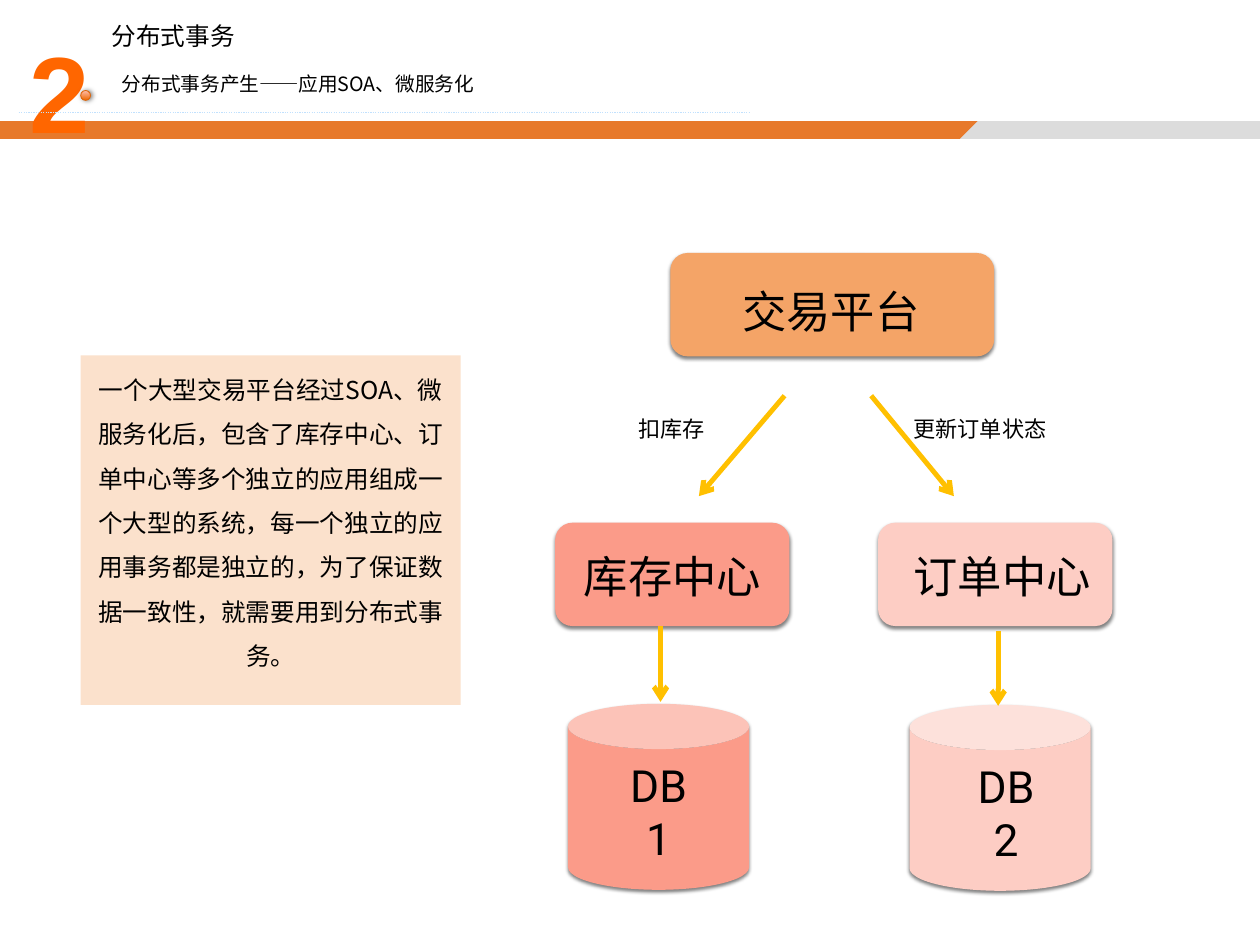
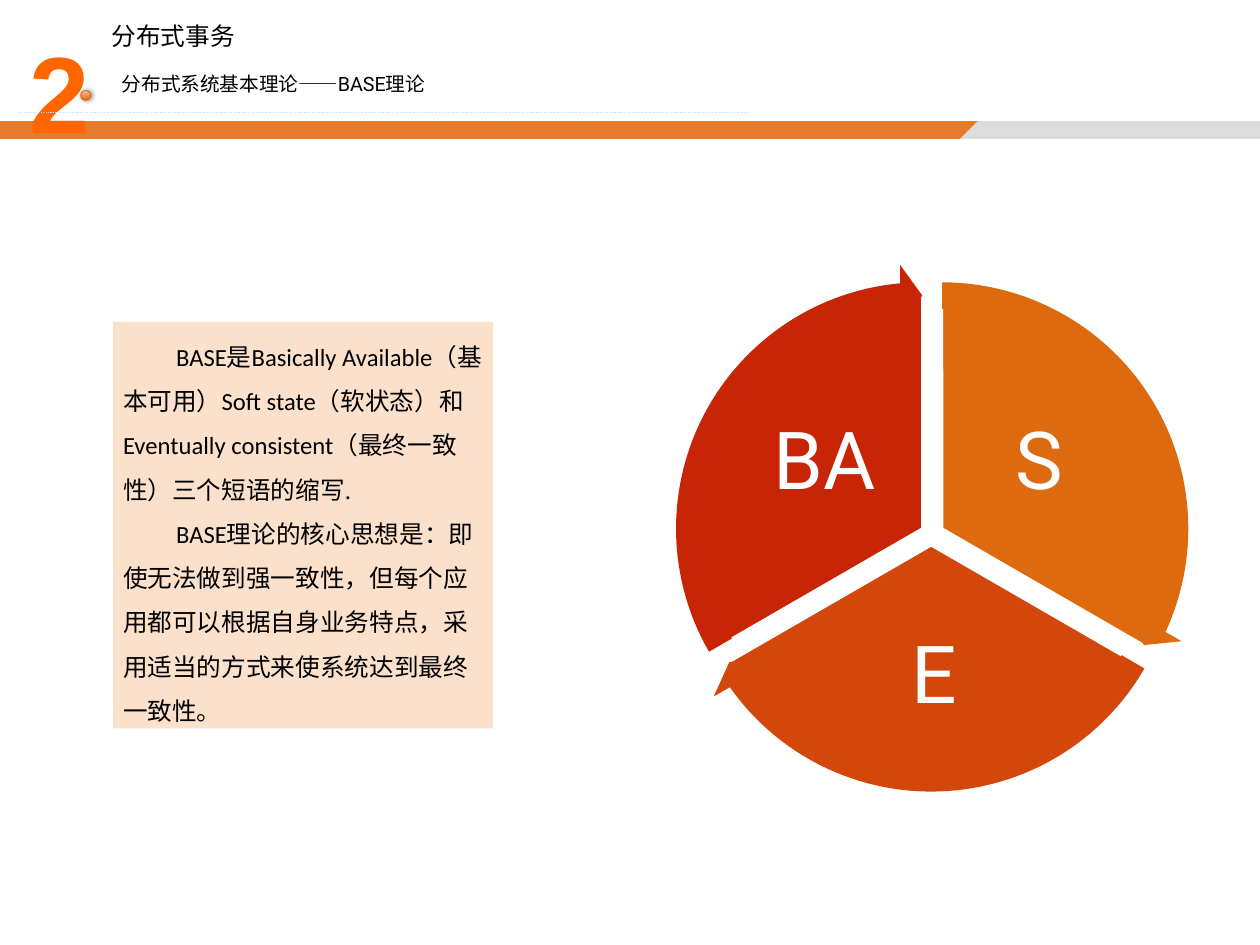
from lxml.etree import SubElement
from pptx import Presentation
from pptx.dml.color import RGBColor
from pptx.enum.dml import MSO_LINE
from pptx.enum.shapes import MSO_CONNECTOR, MSO_SHAPE
from pptx.enum.text import MSO_ANCHOR, PP_ALIGN
from pptx.oxml.ns import qn
from pptx.util import Pt

PX = 10160  # EMU per px, 90 px to the inch
BLACK, WHITE = "000000", "FFFFFF"
ORANGE, GREY, SAND, GOLD = "E7792B", "DCDCDC", "FBE1CC", "FFC000"
CORAL, BLUSH = "FB9B89", "FDCDC4"
CJK, CJK_SUBTITLE = "Noto Sans CJK SC", "Noto Sans CJK JP"
LEFT, CENTER = PP_ALIGN.LEFT, PP_ALIGN.CENTER
TOP, MIDDLE = MSO_ANCHOR.TOP, MSO_ANCHOR.MIDDLE
color_of = RGBColor.from_string


def set_shadow(item, blur=0, distance=0, angle=0):
    """Replace the theme shadow by a soft black one, or by none."""
    effects = SubElement(item._element.spPr, qn("a:effectLst"))
    if blur:
        outer = SubElement(effects, qn("a:outerShdw"), blurRad=str(Pt(blur)),
                           dist=str(Pt(distance)), dir=str(angle * 60000),
                           rotWithShape="0")
        black = SubElement(outer, qn("a:srgbClr"), val=BLACK)
        SubElement(black, qn("a:alpha"), val="50000")


def write(box, text, size, latin, align=CENTER, anchor=TOP, color=BLACK,
          east=CJK, wrap=True, inset=(9, 5), spacing=1.0, indent=0):
    frame = box.text_frame
    frame.text = text
    frame.word_wrap = wrap
    frame.vertical_anchor = anchor
    frame.margin_left = frame.margin_right = inset[0] * PX
    frame.margin_top = frame.margin_bottom = inset[1] * PX
    for para in frame.paragraphs:
        para.alignment = align
        para.line_spacing = spacing
        if indent:
            para._p.get_or_add_pPr().set("indent", str(indent * PX))
        for span in para.runs:
            span.font.size = Pt(size)
            span.font.color.rgb = color_of(color)
            span.font.name = latin
            SubElement(span.font._element, qn("a:ea"), typeface=east)


deck = Presentation()
deck.slide_width, deck.slide_height = 1280 * PX, 960 * PX

# Shared header: bands, chapter number, title, subtitle
bands = [
    (GREY, [(992, 123), (974, 141), (1280, 141), (1280, 123)]),
    (ORANGE, [(0, 123), (0, 141), (975, 141), (993, 123)]),
]
subtitles = [
    ("分布式事务产生——应用SOA、微服务化", CJK_SUBTITLE, 392),
    ("分布式系统基本理论——BASE理论", "Roboto", 512),
]
for subtitle, latin, width in subtitles:
    page = deck.slides.add_slide(deck.slide_layouts[6])
    for color, corners in bands:
        outline = page.shapes.build_freeform(*corners[0], scale=PX)
        outline.add_line_segments(corners[1:], close=True)
        band = outline.convert_to_shape()
        band.fill.solid()
        band.fill.fore_color.rgb = color_of(color)
        band.line.fill.background()
        set_shadow(band)

    number = page.shapes.add_textbox(*[PX * n for n in (21, -24, 72, 159)])
    write(number, "2", 88, "Arial", color="FF6600", inset=(9, 17), spacing=1.25)
    number.text_frame.paragraphs[0].runs[0].font.bold = True

    title = page.shapes.add_textbox(*[PX * n for n in (104, 16, 144, 69)])
    write(title, "分布式事务", 20, CJK, wrap=False)

    dot = page.shapes.add_shape(MSO_SHAPE.OVAL, *[PX * n for n in (82, 92, 10, 10)])
    dot.fill.gradient()
    dot.fill.gradient_angle = 90
    for stop, color in zip(dot.fill.gradient_stops, ("EE6800", "FFBEAD")):
        stop.color.rgb = color_of(color)
    dot.line.color.rgb = color_of("DE670B")
    dot.line.width = Pt(0.75)
    set_shadow(dot, blur=4, distance=1)

    rule = page.shapes.add_connector(MSO_CONNECTOR.STRAIGHT,
                                     *[PX * n for n in (19, 114, 763, 114)])
    rule.line.color.rgb = color_of("C1E1FE")
    rule.line.width = Pt(1)
    rule.line.dash_style = MSO_LINE.ROUND_DOT
    set_shadow(rule)

    box = page.shapes.add_textbox(*[PX * n for n in (115, 68, width, 33)])
    write(box, subtitle, 16, latin, align=LEFT, east=CJK_SUBTITLE)

system_page, theory_page = deck.slides

# Explanation panel on each slide
explanations = [
    (system_page, (82, 361, 386, 355), CJK, CENTER, 0,
     "一个大型交易平台经过SOA、微服务化后，包含了库存中心、订单中心等多个独立的应用"
     "组成一个大型的系统，每一个独立的应用事务都是独立的，为了保证数据一致性，"
     "就需要用到分布式事务。"),
    (theory_page, (115, 327, 386, 413), "Calibri", LEFT, 54,
     "BASE是Basically Available（基本可用）Soft state（软状态）和"
     "Eventually consistent（最终一致性）三个短语的缩写.\n"
     "BASE理论的核心思想是：即使无法做到强一致性，但每个应用都可以根据自身业务特点，"
     "采用适当的方式来使系统达到最终一致性。"),
]
for page, place, latin, align, indent, text in explanations:
    panel = page.shapes.add_shape(MSO_SHAPE.RECTANGLE, *[PX * n for n in place])
    panel.fill.solid()
    panel.fill.fore_color.rgb = color_of(SAND)
    panel.line.fill.background()
    set_shadow(panel)
    write(panel, text, 20, latin, align=align, inset=(10, 5), spacing=1.5,
          indent=indent)

# Slide 1: platform, centres and databases
nodes = [
    (MSO_SHAPE.ROUNDED_RECTANGLE, (681, 257, 329, 105), "F4A467"),
    (MSO_SHAPE.ROUNDED_RECTANGLE, (564, 531, 238, 105), CORAL),
    (MSO_SHAPE.ROUNDED_RECTANGLE, (892, 531, 238, 105), BLUSH),
    (MSO_SHAPE.CAN, (577, 715, 184, 189), CORAL),
    (MSO_SHAPE.CAN, (924, 716, 184, 189), BLUSH),
]
for preset, place, color in nodes:
    node = system_page.shapes.add_shape(preset, *[PX * n for n in place])
    node.fill.solid()
    node.fill.fore_color.rgb = color_of(color)
    node.line.fill.background()
    set_shadow(node, blur=3, distance=2, angle=90)

# Slide 1: arrows
for ends in [(797, 402, 710, 504), (885, 402, 969, 504),
             (671, 636, 671, 713), (1014, 641, 1014, 717)]:
    arrow = system_page.shapes.add_connector(MSO_CONNECTOR.STRAIGHT,
                                             *[PX * n for n in ends])
    arrow.line.color.rgb = color_of(GOLD)
    arrow.line.width = Pt(4)
    SubElement(arrow.line._get_or_add_ln(), qn("a:tailEnd"), type="arrow")
    set_shadow(arrow)

# Slide 1: labels; the database names wrap in their narrow boxes
labels = [
    ("交易平台", (748, 283, 192, 65), 36, False),
    ("库存中心", (587, 552, 192, 65), 36, False),
    ("订单中心", (922, 552, 192, 65), 36, False),
    ("DB1", (630, 792, 78, 65), 36, True),
    ("DB2", (983, 793, 78, 65), 36, True),
    ("扣库存", (643, 416, 78, 38), 18, False),
    ("更新订单状态", (922, 416, 147, 38), 18, False),
]
for text, place, size, wrap in labels:
    label = system_page.shapes.add_textbox(*[PX * n for n in place])
    write(label, text, size, "Roboto", anchor=MIDDLE, wrap=wrap, inset=(5, 5))

# Slide 2: wheel of three sectors; angles are in units of 100000 / 60000 degrees
PIE_SIZE, ARROW_MARGIN, HEAD_ANGLE = 478, 30, 3.28
sectors = [
    ("S", "DE6A10", (718, 298), (162, 18), (970, 400, 171, 142)),
    ("E", "D3470B", (707, 315), (18, 90), (821, 626, 256, 125)),
    ("BA", "C82506", (698, 298), (90, 162), (752, 400, 171, 142)),
]
for letter, color, (left, top), (start, end), place in sectors:
    sector = theory_page.shapes.add_shape(
        MSO_SHAPE.PIE, *[PX * n for n in (left, top, PIE_SIZE, PIE_SIZE)])
    sector.adjustments[0], sector.adjustments[1] = start, end
    sector.fill.solid()
    sector.fill.fore_color.rgb = color_of(color)
    sector.line.color.rgb = color_of(WHITE)
    sector.line.width = Pt(2)
    set_shadow(sector)
    label = theory_page.shapes.add_textbox(*[PX * n for n in place])
    write(label, letter, 65, "Roboto", anchor=MIDDLE, color=WHITE,
          inset=(8, 8), spacing=0.9)

# Slide 2: arrows around the wheel
arrow_size = PIE_SIZE + 2 * ARROW_MARGIN
for letter, color, (left, top), (start, end), place in sectors:
    corner = (left - ARROW_MARGIN, top - ARROW_MARGIN)
    arrow = theory_page.shapes.add_shape(
        MSO_SHAPE.CIRCULAR_ARROW, *[PX * n for n in (*corner, arrow_size, arrow_size)])
    shape_values = (0.05, HEAD_ANGLE, end - HEAD_ANGLE, start, 0.06)
    for index, value in enumerate(shape_values):
        arrow.adjustments[index] = value
    arrow.fill.solid()
    arrow.fill.fore_color.rgb = color_of(color)
    arrow.line.fill.background()
    set_shadow(arrow)

deck.save("out.pptx")
